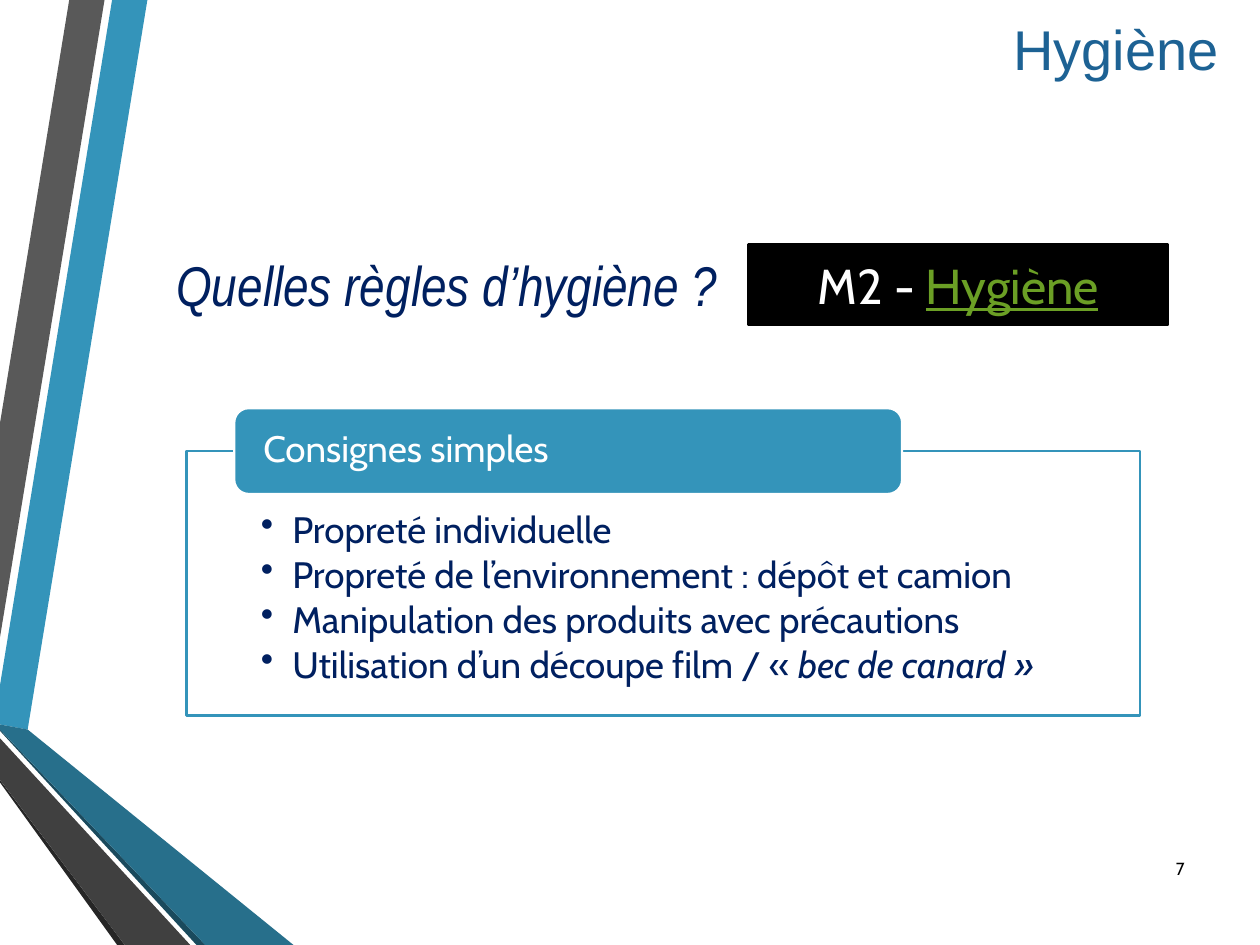
from pptx import Presentation
from pptx.dml.color import RGBColor
from pptx.enum.shapes import MSO_SHAPE
from pptx.enum.text import MSO_ANCHOR, PP_ALIGN
from pptx.oxml.ns import qn
from pptx.util import Inches, Pt
from lxml import etree

RECTANGLE, ROUNDED = MSO_SHAPE.RECTANGLE, MSO_SHAPE.ROUNDED_RECTANGLE
TOP, MIDDLE = MSO_ANCHOR.TOP, MSO_ANCHOR.MIDDLE
LEFT, CENTER, RIGHT = PP_ALIGN.LEFT, PP_ALIGN.CENTER, PP_ALIGN.RIGHT

COLUMNS, ROWS = 1000, 750
CELL = Inches(0.01)
INSETS = (10, 5, 10, 5)
BLUE, NAVY, WHITE, BLACK = "3494BA", "002060", "FFFFFF", "000000"

RIBBONS = [
    (BLUE, [(0, 544), (0, 575), (22, 579), (117, 0), (89, 0)]),
    ("595959", [(83, 0), (55, 0), (0, 336), (0, 506)]),
    ("262626", [(0, 619), (0, 621), (93, 750), (99, 750)]),
    ("1A4A5D", [(0, 579), (0, 580), (156, 750), (163, 750)]),
    ("276F8B", [(0, 579), (163, 750), (233, 750), (22, 579), (0, 575)]),
    ("404040", [(0, 619), (99, 750), (151, 750), (0, 586)]),
]
RULES = [
    [("Propreté individuelle", {})],
    [("Propreté de l’environnement : dépôt et camion", {})],
    [("Manipulation des produits avec précautions", {})],
    [("Utilisation d’un découpe film / «\u00a0", {}), ("bec de canard\u00a0»", {"italic": True})],
]


def color(value):
    return RGBColor.from_string(value)


def cells(*counts):
    return [count * CELL for count in counts]


def set_attributes(target, values):
    for name, value in values.items():
        setattr(target, name, value)


def paint(shape, fill=None, line=None):
    shape.shadow.inherit = False
    if fill:
        shape.fill.solid()
        shape.fill.fore_color.rgb = color(fill)
    else:
        shape.fill.background()
    if line:
        shape.line.color.rgb = color(line)
        shape.line.width = Pt(1.25)
    else:
        shape.line.fill.background()


def add_ribbon(slide, fill, points):
    builder = slide.shapes.build_freeform(*points[0], scale=CELL)
    builder.add_line_segments(points[1:], close=True)
    paint(builder.convert_to_shape(), fill)


def add_box(slide, kind, place, fill=None, line=None):
    shape = slide.shapes.add_shape(kind, *cells(*place))
    paint(shape, fill, line)
    return shape


def add_text_box(slide, place):
    return slide.shapes.add_textbox(*cells(*place))


def add_bullet(paragraph):
    properties = paragraph._p.get_or_add_pPr()
    properties.set("marL", str(25 * CELL))
    properties.set("indent", str(-25 * CELL))
    etree.SubElement(properties, qn("a:buChar")).set("char", "•")


def write(shape, paragraphs, font, ink, anchor=MIDDLE, insets=INSETS, layout=None, bullets=False):
    frame = shape.text_frame
    sides = ("margin_left", "margin_top", "margin_right", "margin_bottom")
    set_attributes(frame, {"word_wrap": True, "vertical_anchor": anchor, **dict(zip(sides, cells(*insets)))})
    for index, runs in enumerate(paragraphs):
        paragraph = frame.add_paragraph() if index else frame.paragraphs[0]
        if bullets:
            add_bullet(paragraph)
        set_attributes(paragraph, {"alignment": LEFT, **(layout or {})})
        for text, changes in runs:
            run = paragraph.add_run()
            run.text = text
            values = {**font, **changes}
            run.font.color.rgb = color(values.pop("ink", ink))
            set_attributes(run.font, values)


def add_rules_panel(slide):
    font = {"name": "Cabin", "size": Pt(21)}
    panel = (148, 358, 757, 210)
    frame = add_box(slide, RECTANGLE, panel, WHITE, BLUE)
    fill_color = frame.fill._xPr.find(qn("a:solidFill"))[0]
    etree.SubElement(fill_color, qn("a:alpha")).set("val", "90000")
    write(add_text_box(slide, panel), RULES, font, NAVY, TOP, (59, 48, 59, 16),
          {"line_spacing": 0.9, "space_after": Pt(3)}, bullets=True)
    add_box(slide, ROUNDED, (186, 324, 530, 68), BLUE, WHITE)
    write(add_text_box(slide, (189, 327, 523, 61)), [[("Consignes simples", {})]], font, WHITE,
          insets=(20, 0, 20, 0), layout={"line_spacing": 0.9})


def main():
    presentation = Presentation()
    set_attributes(presentation, {"slide_width": COLUMNS * CELL, "slide_height": ROWS * CELL})
    slide = presentation.slides.add_slide(presentation.slide_layouts[6])
    for fill, points in RIBBONS:
        add_ribbon(slide, fill, points)
    write(add_text_box(slide, (905, 669, 45, 40)), [[("7", {})]],
          {"name": "Cabin", "size": Pt(10)}, BLACK, layout={"alignment": RIGHT})
    add_rules_panel(slide)
    write(add_box(slide, ROUNDED, (209, 0, 772, 76)), [[("Hygiène", {})]],
          {"name": "Arial", "size": Pt(32)}, "1D6294", layout={"alignment": RIGHT})
    write(add_box(slide, RECTANGLE, (594, 194, 333, 64), BLACK, BLACK),
          [[("M2 - ", {}), ("Hygiène", {"ink": "6B9F25", "underline": True})]],
          {"name": "Cabin", "size": Pt(28)}, WHITE, layout={"alignment": CENTER})
    write(add_text_box(slide, (130, 194, 455, 64)), [[("Quelles règles d’hygiène ?", {})]],
          {"name": "Arial Narrow", "size": Pt(32), "italic": True}, NAVY, TOP)
    presentation.save("out.pptx")


if __name__ == "__main__":
    main()
